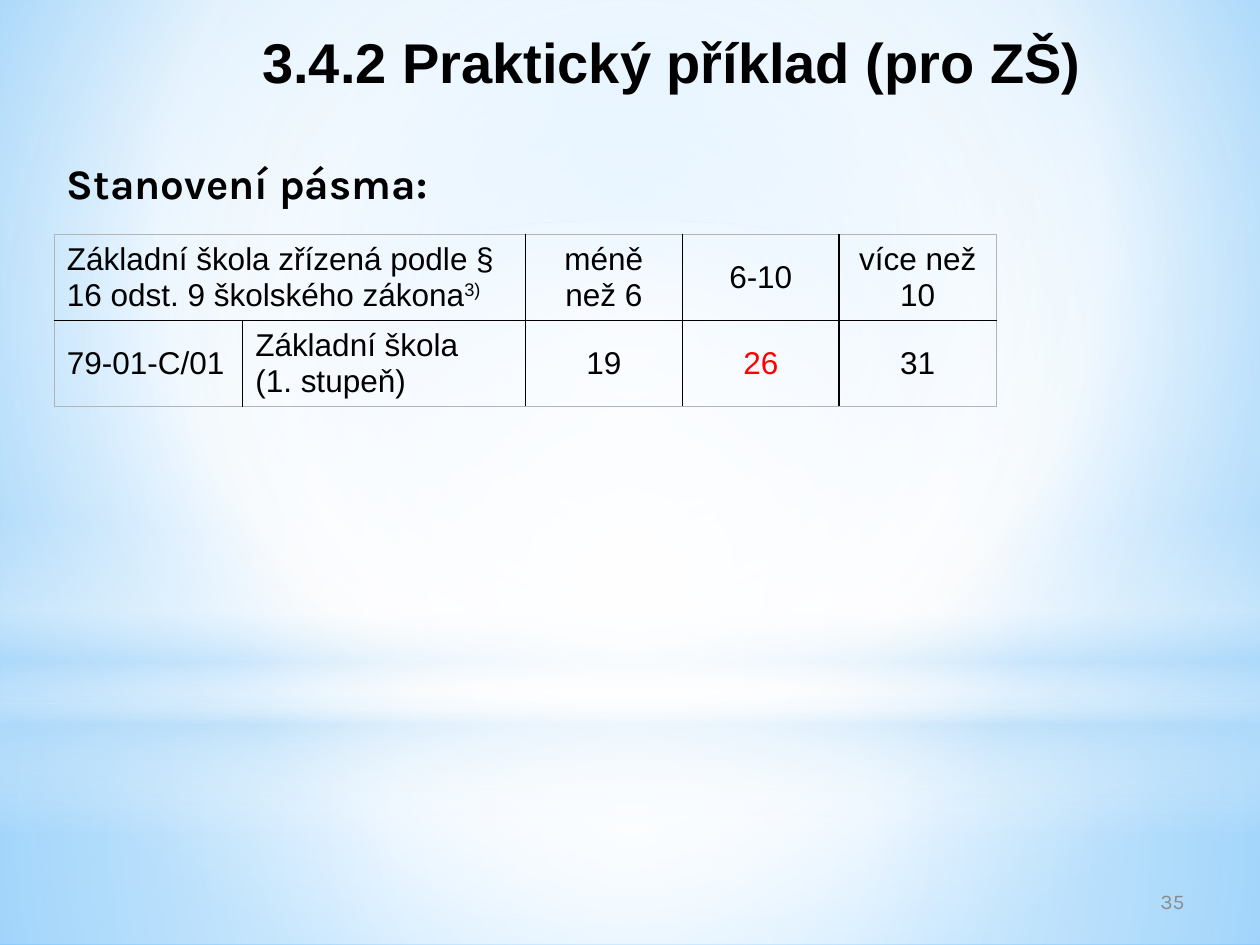
from dataclasses import dataclass

from lxml.etree import SubElement
from pptx import Presentation
from pptx.dml.color import RGBColor
from pptx.enum.shapes import MSO_SHAPE as Preset
from pptx.enum.text import MSO_ANCHOR as Anchor, PP_ALIGN as Align
from pptx.oxml.ns import qn
from pptx.util import Pt

BLACK, RED, GREY, EDGE = "000000", "FF0000", "8C8C8C", "B4B4B4"
CENTRE = (50, 50, 50, 50)


@dataclass
class Gradient:
    stops: list[tuple[int, str, int]]
    focus: tuple[int, int, int, int] | None = CENTRE


@dataclass
class Layer:
    top: float
    height: float
    gradient: Gradient
    preset: Preset = Preset.RECTANGLE


@dataclass
class Entry:
    text: str
    align: Align = Align.CENTER
    color: str = BLACK
    note: str = ""


BACKDROP = Gradient([(0, "9ED5FF", 100), (60, "FFFFFF", 100), (100, "5BB9FF", 100)],
                    (20, 10, 20, 60))
LAYERS = [
    Layer(402, 138, Gradient([(0, "FFFFFF", 91), (37, "FFFFFF", 76), (100, "B4DCFA", 79)])),
    Layer(0, 402, Gradient([(0, "FFFFFF", 89), (48, "FFFFFF", 62), (100, "B4DCFA", 79)])),
    Layer(297, 180, Gradient([(0, "FFFFFF", 0), (29, "FFFFFF", 30), (45, "B4DCFA", 40),
                              (55, "FFFFFF", 26), (65, "B4DCFA", 60), (100, "FFFFFF", 0)], None)),
    Layer(126, 402, Gradient([(0, "FFFFFF", 100), (56, "FFFFFF", 0)]), Preset.OVAL),
]
COLUMNS = [107.7, 161.5, 89.7, 89.7, 89.7]
ROW_HEIGHT = 47.5
ROWS = [
    [Entry("Základní škola zřízená podle § 16 odst. 9 školského zákona", Align.LEFT, note="3)"),
     None, Entry("méně než 6"), Entry("6-10"), Entry("více než 10")],
    [Entry("79-01-C/01", Align.LEFT), Entry("Základní škola\n(1. stupeň)", Align.LEFT),
     Entry("19"), Entry("26", color=RED), Entry("31")],
]


def rgb(value: str) -> RGBColor:
    return RGBColor.from_string(value)


def style(para, size: float, name: str, color: str, bold: bool, align: Align) -> None:
    para.alignment = align
    font = para.font
    font.size, font.name, font.bold = Pt(size), name, bold
    font.color.rgb = rgb(color)


def place(shape, left: float, top: float, width: float, height: float) -> None:
    shape.left, shape.top = Pt(left), Pt(top)
    shape.width, shape.height = Pt(width), Pt(height)


def apply_gradient(fill, holder, gradient: Gradient) -> None:
    fill.solid()
    solid = holder.find(qn("a:solidFill"))
    grad = SubElement(holder, qn("a:gradFill"), rotWithShape="1")
    holder.replace(solid, grad)
    stops = SubElement(grad, qn("a:gsLst"))
    for position, color, alpha in gradient.stops:
        stop = SubElement(stops, qn("a:gs"), pos=str(position * 1000))
        tint = SubElement(stop, qn("a:srgbClr"), val=color)
        SubElement(tint, qn("a:alpha"), val=str(alpha * 1000))
    if gradient.focus is None:
        SubElement(grad, qn("a:lin"), ang="5400000", scaled="0")
        return
    path = SubElement(grad, qn("a:path"), path="circle")
    sides = {side: str(value * 1000) for side, value in zip("ltrb", gradient.focus)}
    SubElement(path, qn("a:fillToRect"), **sides)


def draw_layer(page, layer: Layer) -> None:
    shape = page.shapes.add_shape(layer.preset, 0, Pt(layer.top), Pt(720), Pt(layer.height))
    shape.shadow.inherit = False
    shape.line.fill.background()
    apply_gradient(shape.fill, shape.element.spPr, layer.gradient)
    page.shapes.title.element.addprevious(shape.element)


def add_border(cell, side: str, outer: bool) -> None:
    width = Pt(0.5 if outer else 1)
    line = SubElement(cell._tc.get_or_add_tcPr(), qn(f"a:ln{side}"), w=str(width))
    solid = SubElement(line, qn("a:solidFill"))
    SubElement(solid, qn("a:srgbClr"), val=EDGE if outer else BLACK)


def fill_cell(cell, entry: Entry) -> None:
    cell.vertical_anchor = Anchor.MIDDLE
    cell.margin_top = cell.margin_bottom = Pt(3)
    para = cell.text_frame.paragraphs[0]
    para.text = entry.text
    style(para, 18, "Arial", entry.color, False, entry.align)
    if entry.note:
        span = para.add_run()
        span.text = entry.note
        span._r.get_or_add_rPr().set("baseline", "30000")


def draw_table(page) -> None:
    frame = page.shapes.add_table(len(ROWS), len(COLUMNS), Pt(31), Pt(134),
                                  Pt(sum(COLUMNS)), Pt(ROW_HEIGHT * len(ROWS)))
    table = frame.table
    table.first_row = table.horz_banding = False
    for column, width in zip(table.columns, COLUMNS):
        column.width = Pt(width)
    table.cell(0, 0).merge(table.cell(0, 1))
    for r, entries in enumerate(ROWS):
        table.rows[r].height = Pt(ROW_HEIGHT)
        for c, entry in enumerate(entries):
            cell = table.cell(r, c)
            add_border(cell, "L", c == 0)
            add_border(cell, "R", c == len(COLUMNS) - 1)
            add_border(cell, "T", r == 0)
            add_border(cell, "B", r == len(ROWS) - 1)
            cell.fill.background()
            if entry:
                fill_cell(cell, entry)


def draw_texts(page) -> None:
    title, body = page.shapes.title, page.placeholders[1]
    place(title, 60, 9.5, 648, 57)
    title.text_frame.text = "3.4.2 Praktický příklad (pro ZŠ)"
    title.text_frame.vertical_anchor = Anchor.TOP
    title.text_frame.margin_top = Pt(6.5)
    style(title.text_frame.paragraphs[0], 32, "Arial", BLACK, True, Align.CENTER)

    place(body, 31, 86.5, 657, 429)
    body.text_frame.text = "Stanovení pásma:"
    para = body.text_frame.paragraphs[0]
    style(para, 24, "Karla", BLACK, True, Align.LEFT)
    para.space_before = Pt(2)
    settings = para._p.get_or_add_pPr()
    settings.set("marL", "0")
    settings.set("indent", "0")
    settings.find(qn("a:defRPr")).addprevious(SubElement(settings, qn("a:buNone")))

    box = page.shapes.add_textbox(Pt(516), Pt(500.5), Pt(168), Pt(29))
    box.text_frame.word_wrap = True
    box.text_frame.vertical_anchor = Anchor.MIDDLE
    box.text_frame.text = "35"
    style(box.text_frame.paragraphs[0], 12, "Karla", GREY, False, Align.RIGHT)


def main() -> None:
    deck = Presentation()
    deck.slide_width, deck.slide_height = Pt(720), Pt(540)
    page = deck.slides.add_slide(deck.slide_layouts[1])
    fill = page.background.fill
    fill.solid()
    apply_gradient(fill, page.element.find(".//" + qn("p:bgPr")), BACKDROP)
    for layer in LAYERS:
        draw_layer(page, layer)
    draw_texts(page)
    draw_table(page)
    deck.save("out.pptx")


if __name__ == "__main__":
    main()
